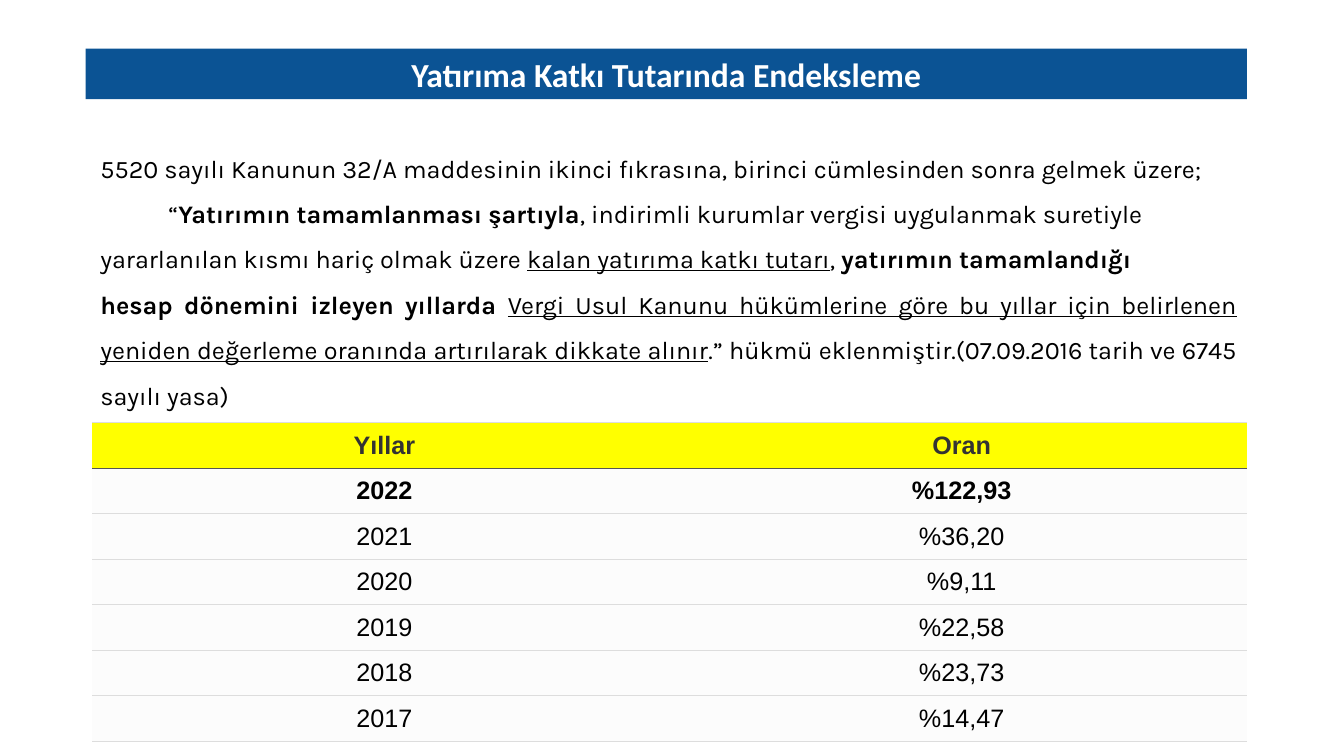
from lxml import etree
from pptx import Presentation, util as u
from pptx.dml.color import RGBColor
from pptx.enum import shapes, text
from pptx.oxml import ns

CENTER, LEFT, JUSTIFY = text.PP_ALIGN.CENTER, text.PP_ALIGN.LEFT, text.PP_ALIGN.JUSTIFY


def color(value):
    return RGBColor.from_string(value)


def points(*values):
    return [u.Pt(value) for value in values]


class SlideBuilder:
    blue, white, black = "0B5394", "FFFFFF", "000000"
    yellow, row_fill, header_text = "FFFF00", "FCFCFC", "333333"
    header_line, row_line = ("555555", 0.5), ("DDDDDD", 1)

    def __init__(self, presentation):
        self.slide = presentation.slides.add_slide(presentation.slide_layouts[6])

    def style(self, paragraph, font_name, size, font_color, bold=None, align=CENTER):
        paragraph.alignment = align
        font = paragraph.font
        font.name, font.size, font.bold = font_name, u.Pt(size), bold
        font.color.rgb = color(font_color)

    def title_bar(self, box, title):
        shape = self.slide.shapes.add_shape(shapes.MSO_SHAPE.RECTANGLE, *points(*box))
        shape.shadow.inherit = False
        shape.fill.solid()
        shape.fill.fore_color.rgb = color(self.blue)
        shape.line.fill.background()
        shape.text_frame.text = title
        self.style(shape.text_frame.paragraphs[0], "Calibri", 24, self.white, True)

    def body(self, box, paragraphs):
        frame = self.slide.shapes.add_textbox(*points(*box)).text_frame
        frame.word_wrap = True
        for index, (align, indent, runs) in enumerate(paragraphs):
            paragraph = frame.add_paragraph() if index else frame.paragraphs[0]
            self.style(paragraph, "Karla", 18, self.black, align=align)
            paragraph.line_spacing = 1.5
            if indent:
                paragraph._p.get_or_add_pPr().set("indent", str(u.Pt(indent)))
            for content, mark in runs:
                run = paragraph.add_run()
                run.text = content
                if mark == "bold":
                    run.font.bold = True
                elif mark == "underline":
                    run.font.underline = True
        paragraph.space_after = u.Pt(12)

    def borders(self, cell, top, bottom):
        properties = cell._tc.get_or_add_tcPr()
        for side, border in (("L", None), ("R", None), ("T", top), ("B", bottom)):
            line = etree.SubElement(properties, ns.qn(f"a:ln{side}"))
            if border:
                line.set("w", str(u.Pt(border[1])))
                fill = etree.SubElement(line, ns.qn("a:solidFill"))
                etree.SubElement(fill, ns.qn("a:srgbClr"), val=border[0])
            else:
                etree.SubElement(line, ns.qn("a:noFill"))

    def cell(self, cell, content, row):
        cell.text = content
        cell.vertical_anchor = text.MSO_ANCHOR.MIDDLE
        cell.margin_left = u.Pt(10)
        cell.margin_right = cell.margin_top = cell.margin_bottom = u.Pt(5)
        self.borders(cell, self.header_line if row == 1 else self.row_line,
                     self.row_line if row else self.header_line)
        cell.fill.solid()
        cell.fill.fore_color.rgb = color(self.row_fill if row else self.yellow)
        self.style(cell.text_frame.paragraphs[0], "Arial", 18,
                   self.black if row else self.header_text, row < 2)

    def table(self, left, top, width, row_height, rows):
        box = points(left, top, width, row_height * len(rows))
        table = self.slide.shapes.add_table(len(rows), len(rows[0]), *box).table
        for row, values in enumerate(rows):
            table.rows[row].height = u.Pt(row_height)
            for column, value in enumerate(values):
                self.cell(table.cell(row, column), value, row)


PROVISION = [
    (LEFT, 0, [
        ("5520 sayılı Kanunun 32/A maddesinin ikinci fıkrasına, "
         "birinci cümlesinden sonra gelmek üzere;", None)]),
    (LEFT, 48.5, [
        ("“", None),
        ("Yatırımın tamamlanması şartıyla", "bold"),
        (", indirimli kurumlar vergisi uygulanmak suretiyle "
         "yararlanılan kısmı hariç olmak üzere ", None),
        ("kalan yatırıma katkı tutarı", "underline"),
        (", ", None),
        ("yatırımın tamamlandığı", "bold")]),
    (JUSTIFY, 0, [
        ("hesap dönemini izleyen yıllarda ", "bold"),
        ("Vergi Usul Kanunu hükümlerine göre bu yıllar için belirlenen "
         "yeniden değerleme oranında artırılarak dikkate alınır", "underline"),
        (".” hükmü eklenmiştir.(07.09.2016 tarih ve 6745 sayılı yasa)", None)]),
]

RATES = [
    ("Yıllar", "Oran"),
    ("2022", "%122,93"),
    ("2021", "%36,20"),
    ("2020", "%9,11"),
    ("2019", "%22,58"),
    ("2018", "%23,73"),
    ("2017", "%14,47"),
]


def main():
    presentation = Presentation()
    presentation.slide_width, presentation.slide_height = points(960, 540)
    builder = SlideBuilder(presentation)
    builder.title_bar((61.2, 34.8, 829.4, 36), "Yatırıma Katkı Tutarında Endeksleme")
    builder.body((64.6, 95, 826, 323), PROVISION)
    builder.table(66, 302, 824.6, 32.5, RATES)
    presentation.save("out.pptx")


if __name__ == "__main__":
    main()
